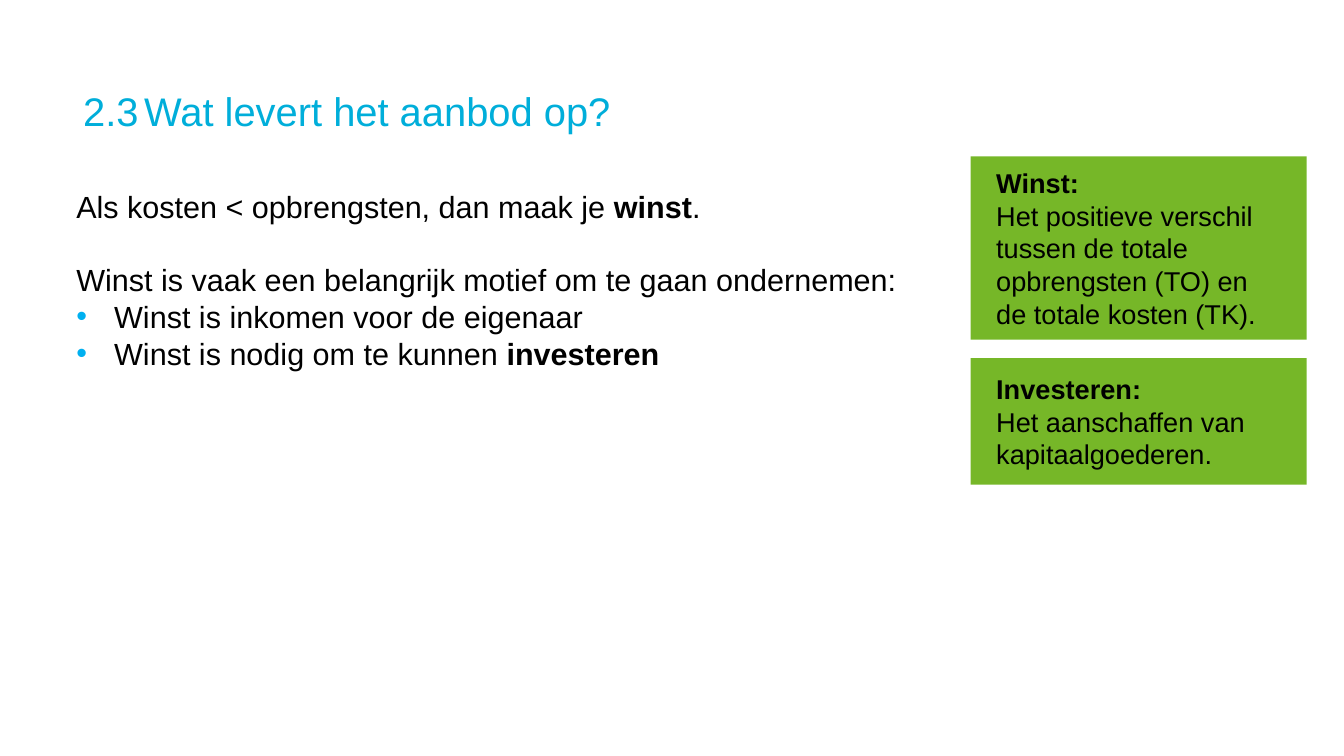
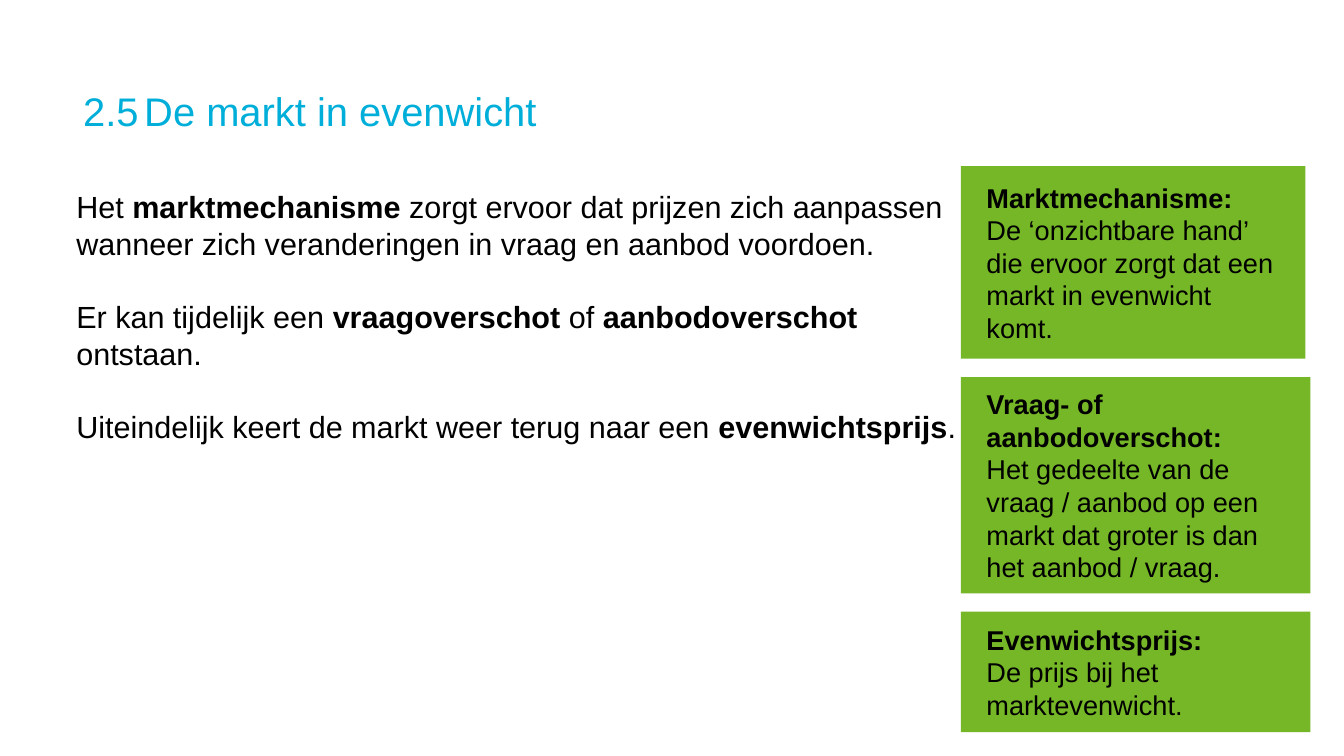
from dataclasses import dataclass

from lxml.etree import SubElement
from pptx import Presentation
from pptx.dml.color import RGBColor
from pptx.enum.shapes import MSO_SHAPE as Shape
from pptx.enum.text import MSO_ANCHOR as Anchor, MSO_AUTO_SIZE as AutoSize, PP_ALIGN as Align
from pptx.oxml.ns import qn
from pptx.util import Inches, Pt


@dataclass(frozen=True)
class Theme:
    font: str = "Arial"
    title: RGBColor = RGBColor(0x00, 0xAE, 0xDA)
    text: RGBColor = RGBColor(0, 0, 0)
    card: RGBColor = RGBColor(0x76, 0xB7, 0x28)
    bullet: str = "00B0F0"
    title_size: int = 47
    body_size: int = 36
    card_size: int = 32
    body_gap: int = 43
    card_gap: float = 0.3


THEME = Theme()
TITLE_BOX = (1.36, 1.36, 19.25, 0.91)
BODY_BOX = (1.15, 3.03, 14.73, 3.74)


@dataclass(frozen=True)
class BodyPara:
    spans: list
    gap: bool = False
    bullet: bool = False


@dataclass(frozen=True)
class Card:
    term: str
    meaning: str
    width: float
    height: float


def add_span(para, text, size, color=THEME.text, bold=False):
    span = para.add_run()
    span.text = text
    font = span.font
    font.name, font.size, font.bold = THEME.font, Pt(size), bold
    font.color.rgb = color


def set_margins(frame, across, down):
    frame.margin_left = frame.margin_right = Inches(across)
    frame.margin_top = frame.margin_bottom = Inches(down)


def next_para(frame, index):
    return frame.add_paragraph() if index else frame.paragraphs[0]


def add_title(page, number, heading, box):
    title = page.shapes.title
    title.left, title.top, title.width, title.height = map(Inches, box)
    frame = title.text_frame
    frame.auto_size = AutoSize.NONE
    frame.vertical_anchor = Anchor.MIDDLE
    set_margins(frame, 0, 0)
    para = frame.paragraphs[0]
    para.alignment = Align.LEFT
    tabs = SubElement(para._p.get_or_add_pPr(), qn("a:tabLst"))
    SubElement(tabs, qn("a:tab"), pos=str(Inches(1)), algn="l")
    add_span(para, f"{number}\t{heading}", THEME.title_size, THEME.title)


def add_bullet(para):
    props = para._p.get_or_add_pPr()
    indent = Inches(0.62)
    props.set("marL", str(indent))
    props.set("indent", str(-indent))
    color = SubElement(props, qn("a:buClr"))
    SubElement(color, qn("a:srgbClr"), val=THEME.bullet)
    SubElement(props, qn("a:buFont"), typeface=THEME.font)
    SubElement(props, qn("a:buChar"), char="•")


def add_body(page, paras, box):
    frame = page.shapes.add_textbox(*map(Inches, box)).text_frame
    frame.word_wrap = True
    set_margins(frame, 0.1, 0.05)
    for index, content in enumerate(paras):
        para = next_para(frame, index)
        if content.bullet:
            add_bullet(para)
        if content.gap:
            para.space_before = Pt(THEME.body_gap)
        for position, text in enumerate(content.spans):
            add_span(para, text, THEME.body_size, bold=position % 2 == 1)


def add_card(page, card, left, top):
    box = page.shapes.add_shape(
        Shape.RECTANGLE, *map(Inches, (left, top, card.width, card.height)))
    box.shadow.inherit = False
    box.fill.solid()
    box.fill.fore_color.rgb = THEME.card
    box.line.fill.background()
    frame = box.text_frame
    frame.word_wrap = True
    frame.vertical_anchor = Anchor.MIDDLE
    set_margins(frame, 0.42, 0.1)
    for index, text in enumerate((card.term, card.meaning)):
        para = next_para(frame, index)
        para.alignment = Align.LEFT
        add_span(para, text, THEME.card_size, bold=index == 0)


def add_cards(page, cards, left, top):
    for card in cards:
        add_card(page, card, left, top)
        top += card.height + THEME.card_gap


def add_page(deck, number, heading, paras, cards, cards_at):
    page = deck.slides.add_slide(deck.slide_layouts[5])
    add_title(page, number, heading, TITLE_BOX)
    add_body(page, paras, BODY_BOX)
    add_cards(page, cards, *cards_at)


def main():
    deck = Presentation()
    deck.slide_width, deck.slide_height = Inches(21.99), Inches(12.37)
    add_page(
        deck, "2.3", "Wat levert het aanbod op?",
        [
            BodyPara(["Als kosten < opbrengsten, dan maak je ", "winst", "."]),
            BodyPara(["Winst is vaak een belangrijk motief om te gaan ondernemen:"], gap=True),
            BodyPara(["Winst is inkomen voor de eigenaar"], bullet=True),
            BodyPara(["Winst is nodig om te kunnen ", "investeren"], bullet=True),
        ],
        [
            Card("Winst:", "Het positieve verschil tussen de totale opbrengsten (TO) "
                 "en de totale kosten (TK).", 5.5, 3),
            Card("Investeren:", "Het aanschaffen van kapitaalgoederen.", 5.5, 2.07),
        ],
        (15.88, 2.56))
    add_page(
        deck, "2.5", "De markt in evenwicht",
        [
            BodyPara(["Het ", "marktmechanisme", " zorgt ervoor dat prijzen zich aanpassen "
                      "wanneer zich veranderingen in vraag en aanbod voordoen."]),
            BodyPara(["Er kan tijdelijk een ", "vraagoverschot", " of ",
                      "aanbodoverschot", " ontstaan."], gap=True),
            BodyPara(["Uiteindelijk keert de markt weer terug naar een ",
                      "evenwichtsprijs", "."], gap=True),
        ],
        [
            Card("Marktmechanisme:", "De ‘onzichtbare hand’ die ervoor zorgt dat een "
                 "markt in evenwicht komt.", 5.64, 3.15),
            Card("Vraag- of aanbodoverschot:", "Het gedeelte van de vraag / aanbod op een "
                 "markt dat groter is dan het aanbod / vraag.", 5.72, 3.54),
            Card("Evenwichtsprijs:", "De prijs bij het marktevenwicht.", 5.72, 1.97),
        ],
        (15.72, 2.72))
    deck.save("out.pptx")


if __name__ == "__main__":
    main()
